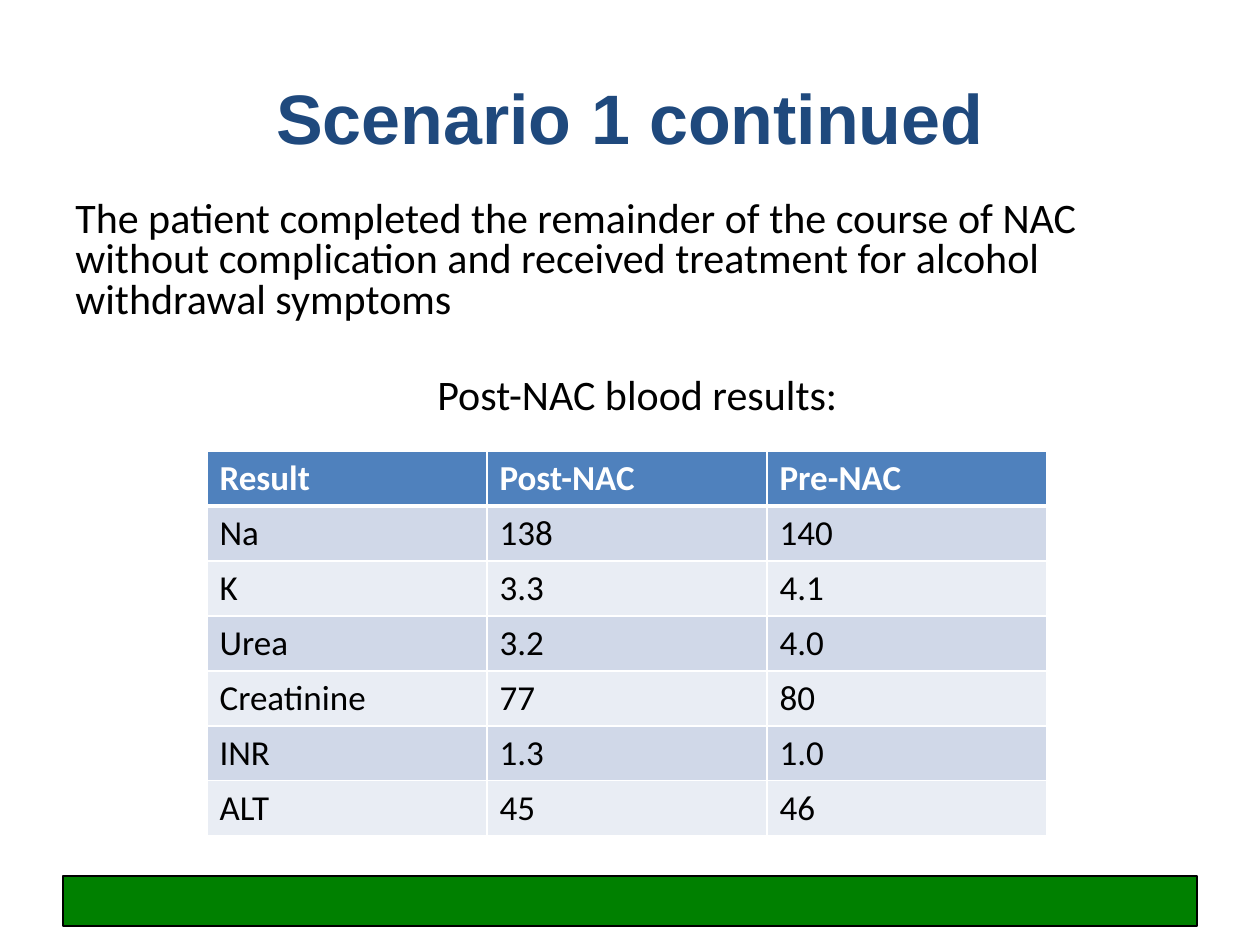
"""Build the slide with the blood results after NAC treatment."""
from lxml import etree
from pptx import Presentation
from pptx import util as u
from pptx.dml.color import RGBColor
from pptx.enum import shapes, text
from pptx.oxml.ns import qn

PX = 914400 // 126
NAVY = RGBColor(0x1F, 0x49, 0x7D)
BLUE = RGBColor(0x4F, 0x81, 0xBD)
BANDS = RGBColor(0xE9, 0xED, 0xF4), RGBColor(0xD0, 0xD8, 0xE8)
GREEN = RGBColor(0x00, 0x80, 0x00)
BLACK = RGBColor(0x00, 0x00, 0x00)
WHITE = RGBColor(0xFF, 0xFF, 0xFF)

TITLE = "Scenario 1 continued"
BODY = [
    ("The patient completed the remainder of the course of NAC without "
     "complication and received treatment for alcohol withdrawal symptoms", 5, 0),
    ("Post-NAC blood results:", 32, 362),
]
RESULTS = [
    ("Result", "Post-NAC", "Pre-NAC"),
    ("Na", "138", "140"),
    ("K", "3.3", "4.1"),
    ("Urea", "3.2", "4.0"),
    ("Creatinine", "77", "80"),
    ("INR", "1.3", "1.0"),
    ("ALT", "45", "46"),
]
FOOTER_BOX = 63, 876, 1134, 50
TITLE_BOX = 63, 38, 1134, 157
BODY_BOX = 63, 195, 1134, 240
TABLE_LEFT, TABLE_TOP, COL_W, ROW_H = 207, 451, 280, 55


def emu(*lengths):
    return [n * PX for n in lengths]


def style(p, size, font, color, bold=False):
    for r in p.runs:
        r.font.size, r.font.name, r.font.bold = u.Pt(size), font, bold
        r.font.color.rgb = color


def add_text_frame(slide, box):
    tf = slide.shapes.add_textbox(*emu(*box)).text_frame
    tf.word_wrap = True
    return tf


def add_border(cell, side, points):
    ln = etree.SubElement(cell._tc.get_or_add_tcPr(), qn(f"a:{side}"), w=str(u.Pt(points)))
    fill = etree.SubElement(ln, qn("a:solidFill"))
    etree.SubElement(fill, qn("a:srgbClr"), val=str(WHITE))


def add_footer(slide):
    sp = slide.shapes.add_shape(shapes.MSO_SHAPE.RECTANGLE, *emu(*FOOTER_BOX))
    sp.shadow.inherit = False
    sp.fill.solid()
    sp.fill.fore_color.rgb = GREEN
    sp.line.color.rgb = BLACK
    sp.line.width = u.Pt(0.75)


def add_title(slide):
    tf = add_text_frame(slide, TITLE_BOX)
    tf.vertical_anchor = text.MSO_ANCHOR.MIDDLE
    tf.text = TITLE
    p = tf.paragraphs[0]
    p.alignment = text.PP_ALIGN.CENTER
    style(p, 40, "Arial", NAVY, True)


def add_body(slide):
    tf = add_text_frame(slide, BODY_BOX)
    for i, (words, before, indent) in enumerate(BODY):
        p = tf.add_paragraph() if i else tf.paragraphs[0]
        p.text = words
        p.line_spacing = 0.8
        p.space_before = u.Pt(before)
        p._p.get_or_add_pPr().set("marL", str(indent * PX))
        style(p, 24, "Calibri", BLACK)


def add_results(slide):
    rows, cols = len(RESULTS), len(RESULTS[0])
    box = emu(TABLE_LEFT, TABLE_TOP, cols * COL_W, rows * ROW_H)
    table = slide.shapes.add_table(rows, cols, *box).table
    for i, values in enumerate(RESULTS):
        header = i == 0
        for j, value in enumerate(values):
            cell = table.cell(i, j)
            cell.text = value
            style(cell.text_frame.paragraphs[0], 20, "Calibri",
                  WHITE if header else BLACK, header)
            for side in ("lnL", "lnR", "lnT", "lnB"):
                heavy = (header and side == "lnB") or (i == 1 and side == "lnT")
                add_border(cell, side, 3 if heavy else 1)
            cell.fill.solid()
            cell.fill.fore_color.rgb = BLUE if header else BANDS[i % 2]


def main():
    prs = Presentation()
    prs.slide_width, prs.slide_height = emu(1260, 945)
    slide = prs.slides.add_slide(prs.slide_layouts[6])
    add_footer(slide)
    add_title(slide)
    add_body(slide)
    add_results(slide)
    prs.save("out.pptx")


if __name__ == "__main__":
    main()
